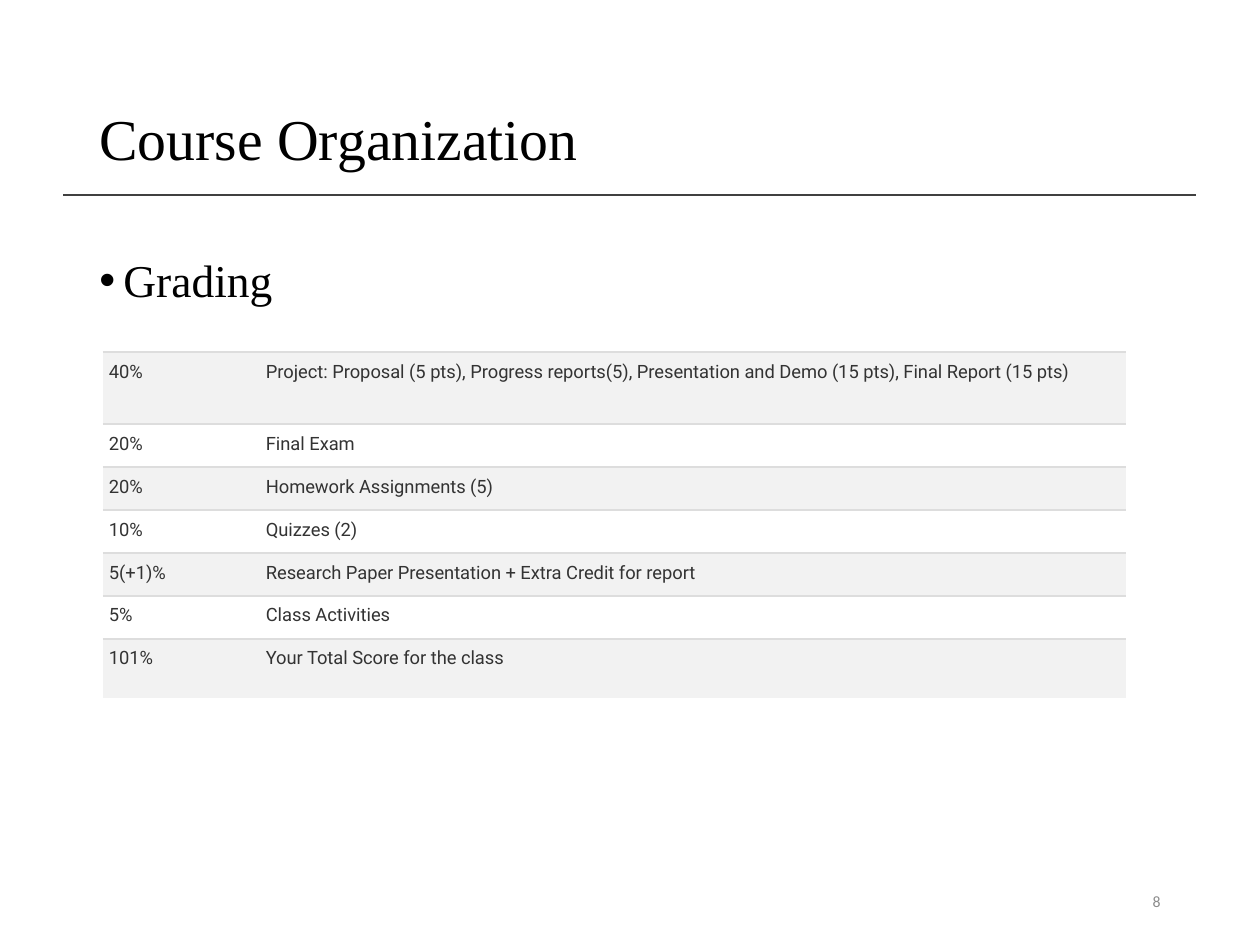
from lxml.etree import SubElement
from pptx import Presentation
from pptx.dml.color import RGBColor
from pptx.enum.shapes import MSO_CONNECTOR
from pptx.enum.text import MSO_ANCHOR as ANCHOR, PP_ALIGN as ALIGN
from pptx.oxml import parse_xml
from pptx.oxml.ns import nsdecls, qn
from pptx.util import Pt

TITLE = "Course Organization"
TOPIC = "Grading"
PAGE = "8"
GRADES = [
    ("40%", "Project: Proposal (5 pts), Progress reports(5), Presentation and Demo (15 pts), Final Report (15 pts)"),
    ("20%", "Final Exam"),
    ("20%", "Homework Assignments (5)"),
    ("10%", "Quizzes (2)"),
    ("5(+1)%", "Research Paper Presentation + Extra Credit for report"),
    ("5%", "Class Activities"),
    ("101%", "Your Total Score for the class"),
]
COLS = [157, 866]
ROWS = [72] + [43] * 5 + [59]
COLORS = {"text": "000000", "cell": "333333", "page": "8C8C8C", "rule": "404040",
          "border": "DDDDDD", "band": "F2F2F2", "plain": "FFFFFF"}
SERIF, SANS, SMALL = "Times New Roman", "Roboto", "Calibri"


def px(n):
    return round(n * 914400 / 126)


def rgb(name):
    return RGBColor.from_string(COLORS[name])


def write(tf, text, size, font, color, align=ALIGN.LEFT, spacing=None, before=0, after=0):
    tf.word_wrap = True
    p = tf.paragraphs[0]
    p.alignment = align
    p.line_spacing = spacing
    p.space_before, p.space_after = Pt(before), Pt(after)
    r = p.add_run()
    r.text = text
    r.font.size, r.font.name = Pt(size), font
    r.font.color.rgb = rgb(color)
    return p


def add_text(slide, box, text, anchor=ANCHOR.MIDDLE, **fmt):
    tf = slide.shapes.add_textbox(*map(px, box)).text_frame
    tf.vertical_anchor = anchor
    return write(tf, text, **fmt)


def add_bullet(p, indent):
    pPr = p._p.get_or_add_pPr()
    pPr.set("marL", str(px(indent)))
    pPr.set("indent", str(-px(indent)))
    SubElement(pPr, qn("a:buFont"), typeface="Arial")
    SubElement(pPr, qn("a:buChar"), char="•")


def set_borders(cell, visible):
    """Draw the visible sides (of L, R, T, B) and clear the others."""
    tcPr = cell._tc.get_or_add_tcPr()
    for i, side in enumerate("LRTB"):
        fill = (f'<a:solidFill><a:srgbClr val="{COLORS["border"]}"/></a:solidFill>'
                if side in visible else "<a:noFill/>")
        tcPr.insert(i, parse_xml(f'<a:ln{side} {nsdecls("a")} w="{Pt(1)}">{fill}</a:ln{side}>'))


def add_grades(slide, left, top):
    frame = slide.shapes.add_table(len(ROWS), len(COLS), px(left), px(top),
                                   px(sum(COLS)), px(sum(ROWS)))
    table = frame.table
    for col, width in zip(table.columns, COLS):
        col.width = px(width)
    last = len(ROWS) - 1
    for i, (height, texts) in enumerate(zip(ROWS, GRADES)):
        table.rows[i].height = px(height)
        for j, text in enumerate(texts):
            cell = table.cell(i, j)
            cell.margin_left = cell.margin_right = px(6)
            cell.margin_top = cell.margin_bottom = px(6)
            cell.vertical_anchor = ANCHOR.TOP
            cell.fill.solid()
            cell.fill.fore_color.rgb = rgb("plain" if i % 2 else "band")
            set_borders(cell, "T" if i == last else "TB")
            write(cell.text_frame, text, size=10.5, font=SANS, color="cell",
                  spacing=1.15, after=15 if i == last else 0)


def main():
    prs = Presentation()
    prs.slide_width, prs.slide_height = px(1260), px(945)
    slide = prs.slides.add_slide(prs.slide_layouts[6])

    rule = slide.shapes.add_connector(MSO_CONNECTOR.STRAIGHT, px(63), px(195), px(1196), px(195))
    rule.line.color.rgb = rgb("rule")
    rule.line.width = Pt(1)
    SubElement(rule._element.spPr, qn("a:effectLst"))

    add_text(slide, (87, 50, 1086, 183), TITLE, size=33, font=SERIF, color="text", spacing=0.9)
    topic = add_text(slide, (87, 252, 1086, 674), TOPIC, anchor=ANCHOR.TOP, size=26,
                     font=SERIF, color="text", spacing=0.9, before=7.5)
    add_bullet(topic, 24)
    add_text(slide, (890, 876, 283, 50), PAGE, size=9, font=SMALL, color="page", align=ALIGN.RIGHT)
    add_grades(slide, 103, 352)
    prs.save("out.pptx")


if __name__ == "__main__":
    main()
